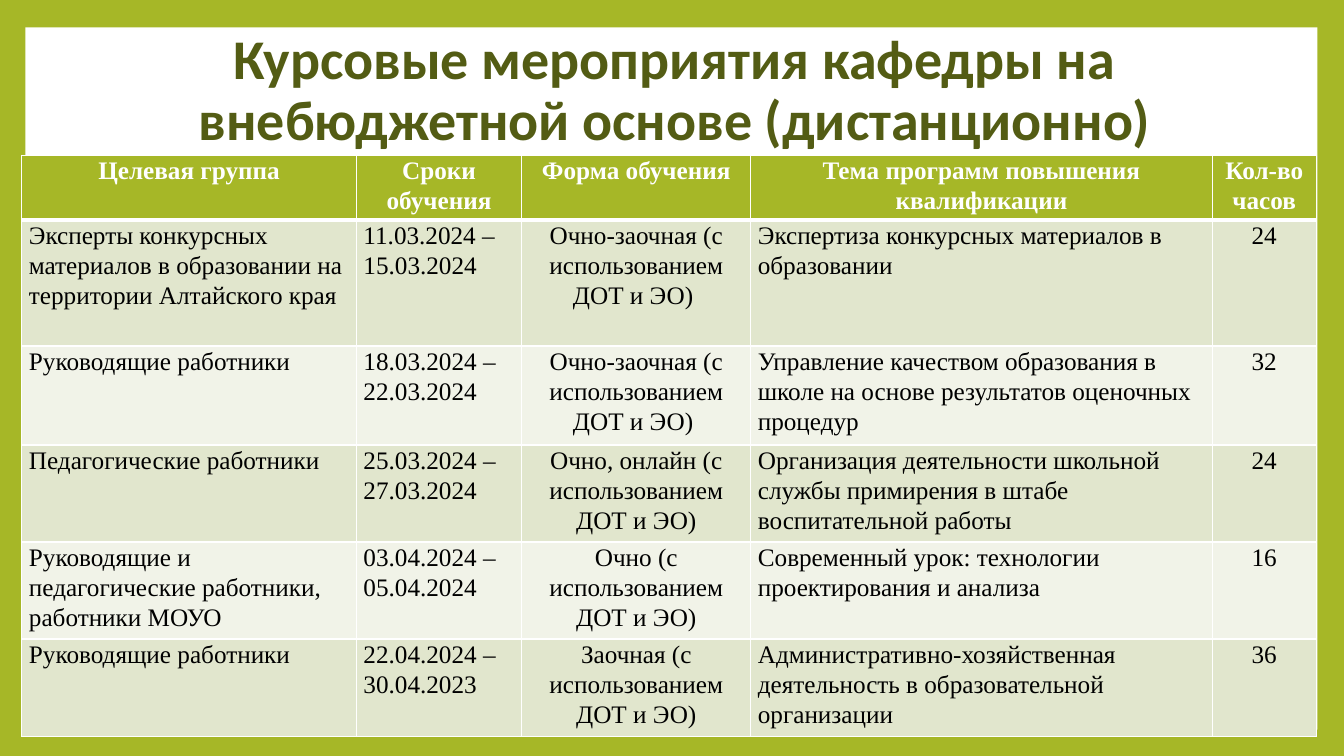
from lxml import etree
from pptx import Presentation
from pptx import util as u
from pptx.dml.color import RGBColor
from pptx.enum import shapes, text
from pptx.oxml import ns

COLORS = {
    "green": "A6B727",
    "olive": "535C14",
    "white": "FFFFFF",
    "black": "000000",
    "band_dark": "E1E6CD",
    "band_light": "F1F3E8",
}
LEFT, CENTER = text.PP_ALIGN.LEFT, text.PP_ALIGN.CENTER

TITLE = "Курсовые мероприятия кафедры на внебюджетной основе (дистанционно)"
HEADINGS = ["Целевая группа", "Сроки обучения", "Форма обучения",
            "Тема программ повышения квалификации", "Кол-во часов"]
# A line break inside a cell starts a new paragraph
COURSES = [
    ["Эксперты конкурсных материалов в образовании на территории Алтайского края",
     "11.03.2024 – 15.03.2024",
     "Очно-заочная (с использованием ДОТ и ЭО) ",
     "Экспертиза конкурсных материалов в образовании", "24"],
    ["Руководящие работники",
     "18.03.2024 –\n22.03.2024",
     "Очно-заочная (с использованием ДОТ и ЭО) ",
     "Управление качеством образования в школе на основе результатов оценочных процедур",
     "32"],
    ["Педагогические работники",
     "25.03.2024 – 27.03.2024",
     "Очно, онлайн (с использованием ДОТ и ЭО)",
     "Организация деятельности школьной службы примирения в штабе воспитательной работы",
     "24"],
    ["Руководящие и педагогические работники, работники МОУО",
     "03.04.2024 –\n05.04.2024",
     "Очно (с использованием ДОТ и ЭО)",
     "Современный урок: технологии проектирования и анализа", "16"],
    ["Руководящие работники",
     "22.04.2024 –\n30.04.2023",
     "Заочная (с использованием ДОТ и ЭО)",
     "Административно-хозяйственная деятельность в образовательной организации", "36"],
]
COLUMN_WIDTHS = [8.43, 4.17, 5.77, 11.63, 2.62]
COLUMN_ALIGNS = [LEFT, LEFT, CENTER, LEFT, CENTER]
ROW_HEIGHTS = [1.6, 3.18, 2.49, 2.41, 2.41, 2.41]


def rgb(color):
    return RGBColor.from_string(COLORS[color])


def write(frame, wording, font, size, color, bold, align, spacing):
    for index, line in enumerate(wording.split("\n")):
        paragraph = frame.add_paragraph() if index else frame.paragraphs[0]
        paragraph.alignment = align
        paragraph.line_spacing = spacing
        run = paragraph.add_run()
        run.text = line
        run.font.name = font
        run.font.size = u.Pt(size)
        run.font.bold = bold
        run.font.color.rgb = rgb(color)


def add_borders(cell, widths):
    properties = cell._tc.get_or_add_tcPr()
    for side, width in widths.items():
        line = etree.SubElement(properties, ns.qn(f"a:ln{side}"), w=str(u.Pt(width)))
        fill = etree.SubElement(line, ns.qn("a:solidFill"))
        etree.SubElement(fill, ns.qn("a:srgbClr"), val=COLORS["white"])


def add_backdrop(slide, left, top, width, height):
    slide.background.fill.solid()
    slide.background.fill.fore_color.rgb = rgb("green")
    panel = slide.shapes.add_shape(shapes.MSO_SHAPE.RECTANGLE, left, top, width, height)
    panel.shadow.inherit = False
    panel.fill.solid()
    panel.fill.fore_color.rgb = rgb("white")
    panel.line.fill.background()


def add_title(slide, left, top, width, height):
    frame = slide.shapes.add_textbox(left, top, width, height).text_frame
    frame.word_wrap = True
    frame.vertical_anchor = text.MSO_ANCHOR.MIDDLE
    write(frame, TITLE, "Calibri", 40, "olive", True, CENTER, 0.9)


def fill_cell(cell, wording, is_header, band, align):
    cell.margin_left = cell.margin_right = u.Cm(0.18)
    cell.margin_top = cell.margin_bottom = 0
    add_borders(cell, {"L": 1, "R": 1, "T": 1, "B": 3 if is_header else 1})
    cell.fill.solid()
    cell.fill.fore_color.rgb = rgb(band)
    write(cell.text_frame, wording, "Times New Roman", 18,
          "white" if is_header else "black", is_header, align, 1.07)


def add_schedule(slide, left, top):
    rows = [HEADINGS] + COURSES
    schedule = slide.shapes.add_table(
        len(rows), len(HEADINGS), left, top,
        u.Cm(sum(COLUMN_WIDTHS)), u.Cm(sum(ROW_HEIGHTS))).table
    for column, width in zip(schedule.columns, COLUMN_WIDTHS):
        column.width = u.Cm(width)
    for row, height in zip(schedule.rows, ROW_HEIGHTS):
        row.height = u.Cm(height)

    for r, entries in enumerate(rows):
        is_header = r == 0
        band = "green" if is_header else "band_dark" if r % 2 else "band_light"
        for c, wording in enumerate(entries):
            align = CENTER if is_header else COLUMN_ALIGNS[c]
            fill_cell(schedule.cell(r, c), wording, is_header, band, align)


def main():
    deck = Presentation()
    deck.slide_width, deck.slide_height = u.Cm(33.87), u.Cm(19.05)
    slide = deck.slides.add_slide(deck.slide_layouts[6])
    # Green frame around a white panel
    add_backdrop(slide, u.Cm(0.64), u.Cm(0.69), u.Cm(32.56), u.Cm(17.7))
    # Heading
    add_title(slide, u.Cm(2.39), u.Cm(0.48), u.Cm(29.21), u.Cm(3.68))
    # Course schedule
    add_schedule(slide, u.Cm(0.55), u.Cm(3.91))
    deck.save("out.pptx")


if __name__ == "__main__":
    main()
